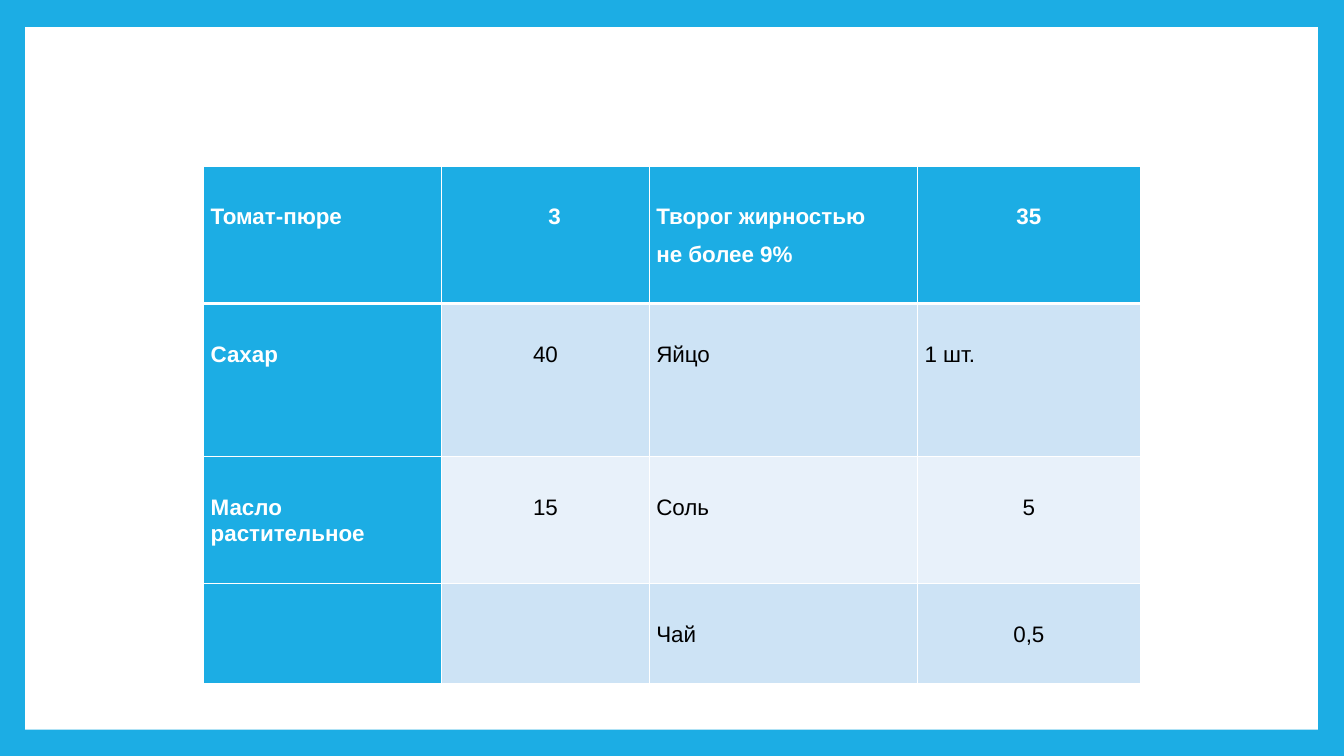
import pptx
import pptx.dml.color
import pptx.enum.shapes
import pptx.enum.text
import pptx.oxml
import pptx.oxml.ns
import pptx.util
from dataclasses import dataclass

Inches = pptx.util.Inches
Pt = pptx.util.Pt
ALIGN = pptx.enum.text.PP_ALIGN

# Content: product, amount, product, amount; one inner list item per paragraph
PRODUCTS = [
    [["Томат-пюре"], ["3"], ["Творог жирностью", "не более 9%"], ["35"]],
    [["Сахар"], ["40"], ["Яйцо"], ["1 шт."]],
    [["Масло растительное"], ["15"], ["Соль"], ["5"]],
    [[], [], ["Чай"], ["0,5"]],
]
COLUMN_WIDTHS = [2.36, 2.06, 2.66, 2.21]
ROW_HEIGHTS = [1.36, 1.52, 1.26, 0.99]
TABLE_LEFT, TABLE_TOP = 2.02, 1.65
SIDE_INSET, TOP_INSET = 0.07, 0.37
LEFT_ALIGNED_AMOUNTS = {(1, 3)}
LEFT_INSETS = {(0, 1): 0.25}


@dataclass(frozen=True)
class Theme:
    accent: str = "1CADE4"
    paper: str = "FFFFFF"
    ink: str = "000000"
    bands: tuple = ("E8F1FA", "CDE3F5")
    font: str = "Arial"
    size: int = 16
    grid_line: int = 1
    header_line: int = 3


THEME = Theme()


def rgb(value):
    return pptx.dml.color.RGBColor.from_string(value)


def add_borders(cell, row):
    properties = cell._tc.get_or_add_tcPr()
    widths = {
        "L": THEME.grid_line,
        "R": THEME.grid_line,
        "T": THEME.header_line if row == 1 else THEME.grid_line,
        "B": THEME.header_line if row == 0 else THEME.grid_line,
    }
    for position, (side, width) in enumerate(widths.items()):
        border = pptx.oxml.parse_xml(
            f'<a:ln{side} {pptx.oxml.ns.nsdecls("a")} w="{Pt(width)}">'
            f'<a:solidFill><a:srgbClr val="{THEME.paper}"/></a:solidFill></a:ln{side}>'
        )
        properties.insert(position, border)


def fill_cell(cell, row, column, lines):
    heading = row == 0 or column == 0
    cell.fill.solid()
    cell.fill.fore_color.rgb = rgb(THEME.accent if heading else THEME.bands[row % 2])
    add_borders(cell, row)
    cell.margin_left = Inches(LEFT_INSETS.get((row, column), SIDE_INSET))
    cell.margin_right = Inches(SIDE_INSET)
    cell.margin_top = Inches(TOP_INSET)
    cell.margin_bottom = 0
    if not lines:
        return
    cell.text_frame.text = "\n".join(lines)
    centred = column % 2 == 1 and (row, column) not in LEFT_ALIGNED_AMOUNTS
    for paragraph in cell.text_frame.paragraphs:
        paragraph.alignment = ALIGN.CENTER if centred else ALIGN.LEFT
        paragraph.line_spacing = 1.05
        paragraph.space_after = Pt(8)
        for run in paragraph.runs:
            run.font.name = THEME.font
            run.font.size = Pt(THEME.size)
            run.font.bold = heading
            run.font.color.rgb = rgb(THEME.paper if heading else THEME.ink)


def main():
    presentation = pptx.Presentation()
    presentation.slide_width = Inches(13.33)
    presentation.slide_height = Inches(7.5)
    slide = presentation.slides.add_slide(presentation.slide_layouts[6])

    # Coloured frame around a white page
    slide.background.fill.solid()
    slide.background.fill.fore_color.rgb = rgb(THEME.accent)
    page = slide.shapes.add_shape(
        pptx.enum.shapes.MSO_SHAPE.RECTANGLE,
        Inches(0.25), Inches(0.27), Inches(12.82), Inches(6.97),
    )
    page.shadow.inherit = False
    page.fill.solid()
    page.fill.fore_color.rgb = rgb(THEME.paper)
    page.line.fill.background()

    # Product table
    products = slide.shapes.add_table(
        len(ROW_HEIGHTS), len(COLUMN_WIDTHS),
        Inches(TABLE_LEFT), Inches(TABLE_TOP),
        Inches(sum(COLUMN_WIDTHS)), Inches(sum(ROW_HEIGHTS)),
    ).table
    products.first_col = True
    for column, width in zip(products.columns, COLUMN_WIDTHS):
        column.width = Inches(width)
    for row, height in zip(products.rows, ROW_HEIGHTS):
        row.height = Inches(height)
    for row, entries in enumerate(PRODUCTS):
        for column, lines in enumerate(entries):
            fill_cell(products.cell(row, column), row, column, lines)

    presentation.save("out.pptx")


if __name__ == "__main__":
    main()
